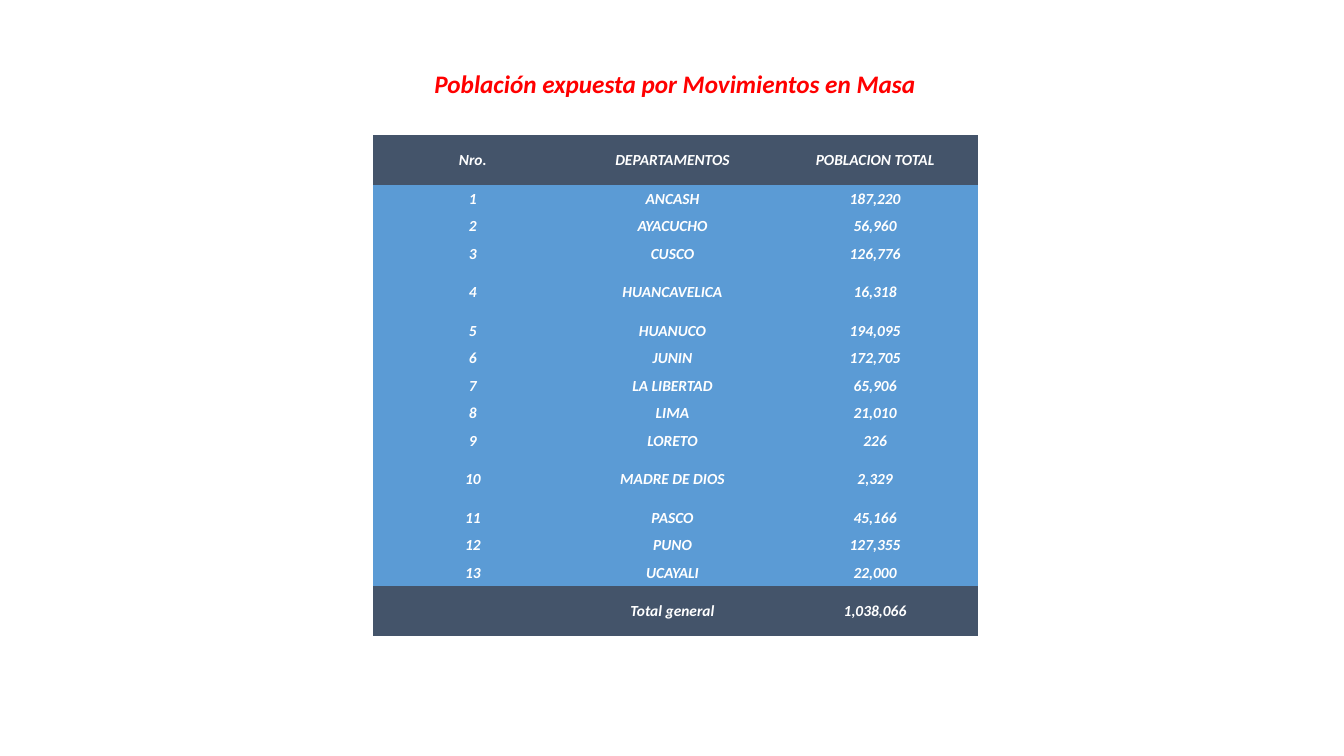
from pptx import Presentation
from pptx.dml.color import RGBColor
from pptx.enum.text import MSO_ANCHOR, MSO_AUTO_SIZE, PP_ALIGN
from pptx.util import Inches, Pt

# Content
TITLE = "Población expuesta por Movimientos en Masa"
HEADER = ("Nro.", "DEPARTAMENTOS", "POBLACION TOTAL")
POPULATION = [
    ("ANCASH", 187220),
    ("AYACUCHO", 56960),
    ("CUSCO", 126776),
    ("HUANCAVELICA", 16318),
    ("HUANUCO", 194095),
    ("JUNIN", 172705),
    ("LA LIBERTAD", 65906),
    ("LIMA", 21010),
    ("LORETO", 226),
    ("MADRE DE DIOS", 2329),
    ("PASCO", 45166),
    ("PUNO", 127355),
    ("UCAYALI", 22000),
]
TOTAL_LABEL = "Total general"

THEME = {
    "font": "Calibri", "title_size": 18, "cell_size": 11,
    "title": "FF0000", "text": "FFFFFF", "band": "44546A", "body": "5B9BD5",
}

# Layout in inches
SLIDE_W, SLIDE_H = 13.33, 7.5
TITLE_BOX = (4.18, 0.63, 5.03, 0.4)
TABLE_LEFT, TABLE_TOP, TABLE_H = 3.7, 1.34, 4.97
COLUMNS = (1.98, 1.98, 2.04)
LONG_NAME = 12      # names this long get a tall row
TALL_ROW = 1.8      # height relative to a normal row
NO_GRID_STYLE = "{2D5ABB26-0587-4C30-8999-92F81FD0307C}"


def write(tf, text, size, color):
    p = tf.paragraphs[0]
    p.alignment = PP_ALIGN.CENTER
    r = p.add_run()
    r.text = text
    r.font.name = THEME["font"]
    r.font.size = Pt(size)
    r.font.bold = r.font.italic = True
    r.font.color.rgb = RGBColor.from_string(color)


def add_title(s):
    tf = s.shapes.add_textbox(*map(Inches, TITLE_BOX)).text_frame
    tf.word_wrap = False
    tf.auto_size = MSO_AUTO_SIZE.SHAPE_TO_FIT_TEXT
    write(tf, TITLE, size=THEME["title_size"], color=THEME["title"])


def fill_cell(cell, text, fill):
    cell.fill.solid()
    cell.fill.fore_color.rgb = RGBColor.from_string(fill)
    cell.vertical_anchor = MSO_ANCHOR.MIDDLE
    cell.margin_left = cell.margin_right = cell.margin_top = Inches(0.01)
    cell.margin_bottom = 0
    if text:
        write(cell.text_frame, text, size=THEME["cell_size"], color=THEME["text"])


def add_population_table(s):
    body = [(str(n), name, f"{count:,}")
            for n, (name, count) in enumerate(POPULATION, 1)]
    total = sum(count for _, count in POPULATION)
    rows = [HEADER, *body, ("", TOTAL_LABEL, f"{total:,}")]

    weights = [TALL_ROW if len(row[1]) >= LONG_NAME else 1 for row in rows]
    unit = TABLE_H / sum(weights)

    frame = s.shapes.add_table(
        len(rows), len(COLUMNS), Inches(TABLE_LEFT), Inches(TABLE_TOP),
        Inches(sum(COLUMNS)), Inches(TABLE_H))
    table = frame.table
    table.first_row = table.horz_banding = False
    # Plain style without grid lines
    table._tbl.tblPr[0].text = NO_GRID_STYLE

    for column, width in zip(table.columns, COLUMNS):
        column.width = Inches(width)
    for i, (row, weight) in enumerate(zip(rows, weights)):
        table.rows[i].height = Inches(unit * weight)
        fill = THEME["band"] if i in (0, len(rows) - 1) else THEME["body"]
        for j, text in enumerate(row):
            fill_cell(table.cell(i, j), text, fill)


def main():
    prs = Presentation()
    prs.slide_width, prs.slide_height = Inches(SLIDE_W), Inches(SLIDE_H)
    s = prs.slides.add_slide(prs.slide_layouts[6])
    add_title(s)
    add_population_table(s)
    prs.save("out.pptx")


if __name__ == "__main__":
    main()
